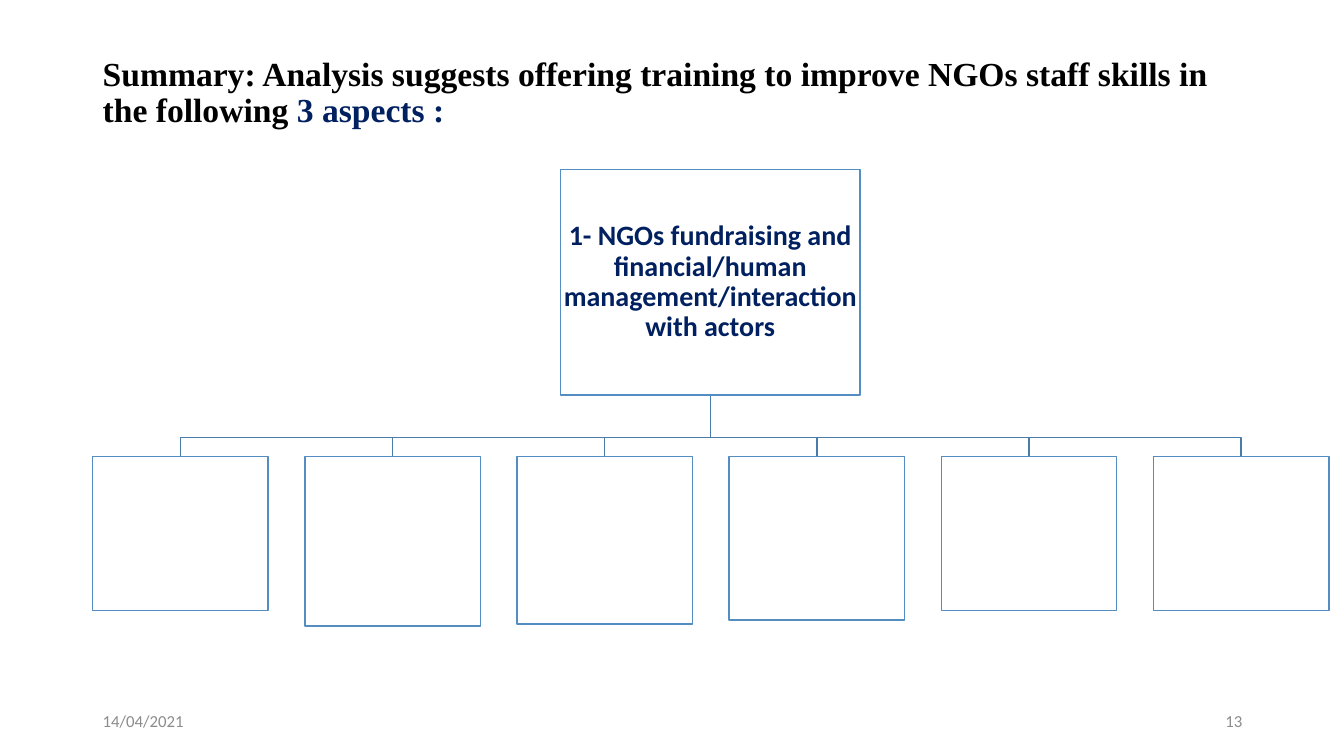
from pptx import Presentation
from pptx.dml.color import RGBColor
from pptx.enum import shapes, text
from pptx.util import Inches, Pt

LEFT, TOP, WIDE = 0.92, 4.53, 1.74
STEP = (11.44 - LEFT) / 5
HEIGHTS = [1.53, 1.68, 1.66, 1.62, 1.53, 1.53]
ROOT = (5.56, 1.68, 2.97, 2.24)
STEM, FOOT, BUS = 7.05, 3.92, 4.34
NAVY, GRAY = "002060", "8C8C8C"
LEAD = "Summary: Analysis suggests offering training to improve NGOs staff skills in the following "
TOPIC = "1- NGOs fundraising and financial/human management/interaction with actors"


def paint(color, code):
    color.rgb = RGBColor.from_string(code)


def trim(shape, code):
    shape.shadow.inherit = False
    shape.line.width = Pt(1)
    paint(shape.line.color, code)


def write(shape, runs, size, font="Calibri", bold=False, align="LEFT", space=1.0, inset=None):
    frame = shape.text_frame
    style = {"word_wrap": True, "vertical_anchor": text.MSO_ANCHOR.MIDDLE}
    if inset is not None:
        for side in ("left", "right", "top", "bottom"):
            style[f"margin_{side}"] = Inches(inset)
    for key, value in style.items():
        setattr(frame, key, value)
    para = frame.paragraphs[0]
    para.alignment = getattr(text.PP_ALIGN, align)
    para.line_spacing = space
    for words, code in runs:
        run = para.add_run()
        run.text = words
        for key, value in {"name": font, "size": Pt(size), "bold": bold}.items():
            setattr(run.font, key, value)
        paint(run.font.color, code)


def label(slide, place, runs, size, **style):
    write(slide.shapes.add_textbox(*map(Inches, place)), runs, size, **style)


def box(slide, place):
    shape = slide.shapes.add_shape(shapes.MSO_SHAPE.RECTANGLE, *map(Inches, place))
    shape.fill.solid()
    paint(shape.fill.fore_color, "FFFFFF")
    trim(shape, "538DC1")
    return shape


def branch(slide, end):
    points = [(STEM, BUS), (end, BUS), (end, TOP)]
    pen = slide.shapes.build_freeform(Inches(STEM), Inches(FOOT))
    pen.add_line_segments([(Inches(x), Inches(y)) for x, y in points], close=False)
    shape = pen.convert_to_shape()
    shape.fill.background()
    trim(shape, "497CAB")


def main():
    deck = Presentation()
    deck.slide_width, deck.slide_height = Inches(13.33), Inches(7.5)
    slide = deck.slides.add_slide(deck.slide_layouts[6])
    label(slide, (LEFT, 0.4, 11.5, 1.06), [(LEAD, "000000"), ("3 aspects :", NAVY)], 24,
          font="Times New Roman", bold=True, space=0.9)
    lefts = [LEFT + STEP * i for i in range(len(HEIGHTS))]
    for left in reversed(lefts):
        branch(slide, left + WIDE / 2)
    write(box(slide, ROOT), [(TOPIC, NAVY)], 20, bold=True, align="CENTER", space=0.9, inset=0.01)
    for left, high in zip(lefts, HEIGHTS):
        box(slide, (left, TOP, WIDE, high))
    label(slide, (LEFT, 6.95, 3, 0.4), [("14/04/2021", GRAY)], 12)
    label(slide, (9.42, 6.95, 3, 0.4), [("13", GRAY)], 12, align="RIGHT")
    deck.save("out.pptx")


if __name__ == "__main__":
    main()
